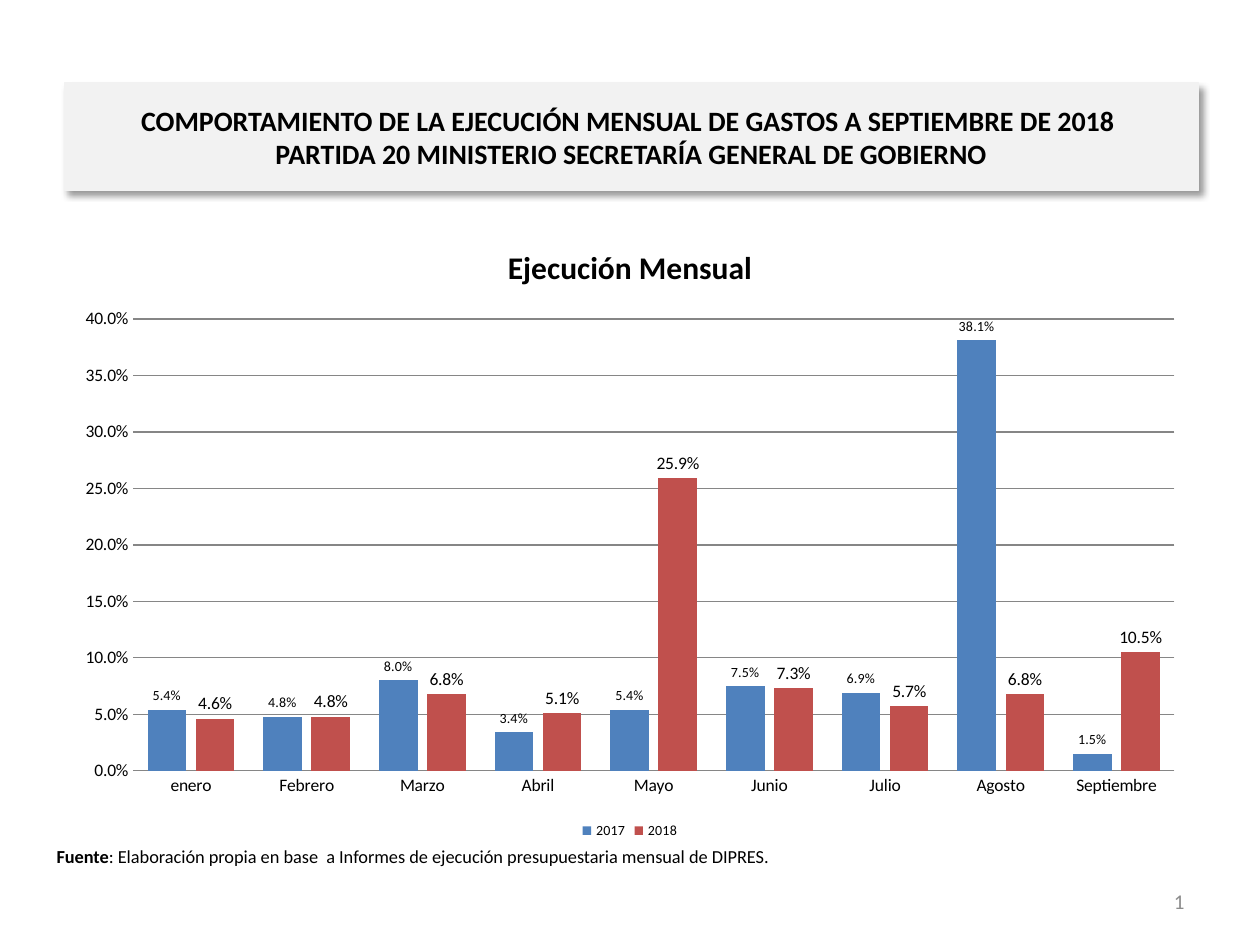
"""Build the slide on monthly spending execution with a clustered column chart."""
from lxml.etree import SubElement
from pptx import Presentation
from pptx.chart.data import CategoryChartData
from pptx.dml.color import RGBColor
from pptx.enum.chart import XL_CHART_TYPE, XL_LABEL_POSITION, XL_LEGEND_POSITION, XL_TICK_MARK
from pptx.enum.text import MSO_ANCHOR, MSO_AUTO_SIZE, PP_ALIGN
from pptx.oxml import parse_xml
from pptx.oxml.ns import nsdecls, qn
from pptx.util import Inches, Pt

BLACK = RGBColor(0x00, 0x00, 0x00)
PANEL = RGBColor(0xF2, 0xF2, 0xF2)
GRAY = RGBColor(0x8C, 0x8C, 0x8C)
GRID = RGBColor(0x86, 0x86, 0x86)
BLUE = RGBColor(0x4F, 0x81, 0xBD)
RED = RGBColor(0xC0, 0x50, 0x4D)
FONT = "Calibri"


def style(font, size, color=BLACK, bold=False):
    font.name, font.size, font.bold = FONT, Pt(size), bold
    font.color.rgb = color


def add_text(p, text, size=10.5, color=BLACK, bold=False, align=PP_ALIGN.LEFT):
    p.alignment = align
    r = p.add_run()
    r.text = text
    style(r.font, size, color, bold)
    return r


prs = Presentation()
prs.slide_width, prs.slide_height = Inches(10), Inches(7.5)
W, H = prs.slide_width, prs.slide_height
margin, content = int(W * 0.05), int(W * 0.9)
s = prs.slides.add_slide(prs.slide_layouts[5])

title = s.shapes.title
title.left, title.top = Inches(0.51), Inches(0.66)
title.width, title.height = content, Inches(0.85)
title.fill.solid()
title.fill.fore_color.rgb = PANEL
title.line.color.rgb = PANEL
title.line.width = Pt(0.75)
title._element.spPr.append(parse_xml(
    f'<a:effectLst {nsdecls("a")}><a:outerShdw blurRad="50800" dist="38100" dir="2700000" '
    'algn="tl" rotWithShape="0"><a:srgbClr val="000000"><a:alpha val="40000"/></a:srgbClr>'
    '</a:outerShdw></a:effectLst>'))
tf = title.text_frame
tf.word_wrap, tf.auto_size = True, MSO_AUTO_SIZE.NONE
tf.vertical_anchor = MSO_ANCHOR.MIDDLE
p = tf.paragraphs[0]
heading = dict(size=16, bold=True, align=PP_ALIGN.CENTER)
add_text(p, "COMPORTAMIENTO DE LA EJECUCIÓN MENSUAL DE GASTOS A SEPTIEMBRE DE 2018 ", **heading)
p.add_line_break()
add_text(p, "PARTIDA 20 MINISTERIO SECRETARÍA GENERAL DE GOBIERNO", **heading)

data = CategoryChartData(number_format="0.0%")
data.categories = ["enero", "Febrero", "Marzo", "Abril", "Mayo", "Junio", "Julio",
                   "Agosto", "Septiembre"]
data.add_series("2017", [0.054, 0.048, 0.08, 0.034, 0.054, 0.075, 0.069, 0.381, 0.015])
data.add_series("2018", [0.046, 0.048, 0.068, 0.051, 0.259, 0.073, 0.057, 0.068, 0.105])
chart = s.shapes.add_chart(XL_CHART_TYPE.COLUMN_CLUSTERED, margin, Inches(1.75),
                           content, int(H * 0.66), data).chart
style(chart.font, 10)
chart.has_title = True
add_text(chart.chart_title.text_frame.paragraphs[0], "Ejecución Mensual", size=18, bold=True,
         align=PP_ALIGN.CENTER)
chart.chart_title.include_in_layout = False
chart.has_legend = True
chart.legend.position = XL_LEGEND_POSITION.BOTTOM
chart.legend.include_in_layout = False
style(chart.legend.font, 8)

for axis in (chart.category_axis, chart.value_axis):
    axis.major_tick_mark = axis.minor_tick_mark = XL_TICK_MARK.NONE
    style(axis.tick_labels.font, 10)
chart.category_axis.format.line.color.rgb = GRID
axis = chart.value_axis
axis.minimum_scale, axis.maximum_scale, axis.major_unit = 0, 0.4, 0.05
axis.format.line.fill.background()
axis.major_gridlines.format.line.color.rgb = GRID
axis.tick_labels.number_format = "0.0%"
axis.tick_labels.number_format_is_linked = False

plot = chart.plots[0]
plot.gap_width, plot.overlap, plot.vary_by_categories = 75, -25, False
for series, color, size in zip(plot.series, (BLUE, RED), (8, 10)):
    series.format.fill.solid()
    series.format.fill.fore_color.rgb = color
    labels = series.data_labels
    labels.show_value = True
    labels.position = XL_LABEL_POSITION.OUTSIDE_END
    labels.number_format, labels.number_format_is_linked = "0.0%", False
    style(labels.font, size)

tf = s.shapes.add_textbox(Inches(0.35), Inches(6.66), Inches(9.19), Inches(0.4)).text_frame
tf.word_wrap = True
p = tf.paragraphs[0]
add_text(p, "Fuente", bold=True)
add_text(p, ": Elaboración propia en base  a Informes de ejecución presupuestaria mensual de DIPRES.")

tf = s.shapes.add_textbox(Inches(7.17), Inches(6.95), Inches(2.33), Inches(0.4)).text_frame
tf.word_wrap, tf.vertical_anchor = True, MSO_ANCHOR.MIDDLE
p = tf.paragraphs[0]
r = add_text(p, "3", size=12, color=GRAY, align=PP_ALIGN.RIGHT)
field = SubElement(p._p, qn("a:fld"), id="{B6F15528-21DE-4FAA-801E-634DDDAF4B2B}", type="slidenum")
field.extend(list(r._r))
p._p.remove(r._r)

prs.save("out.pptx")
